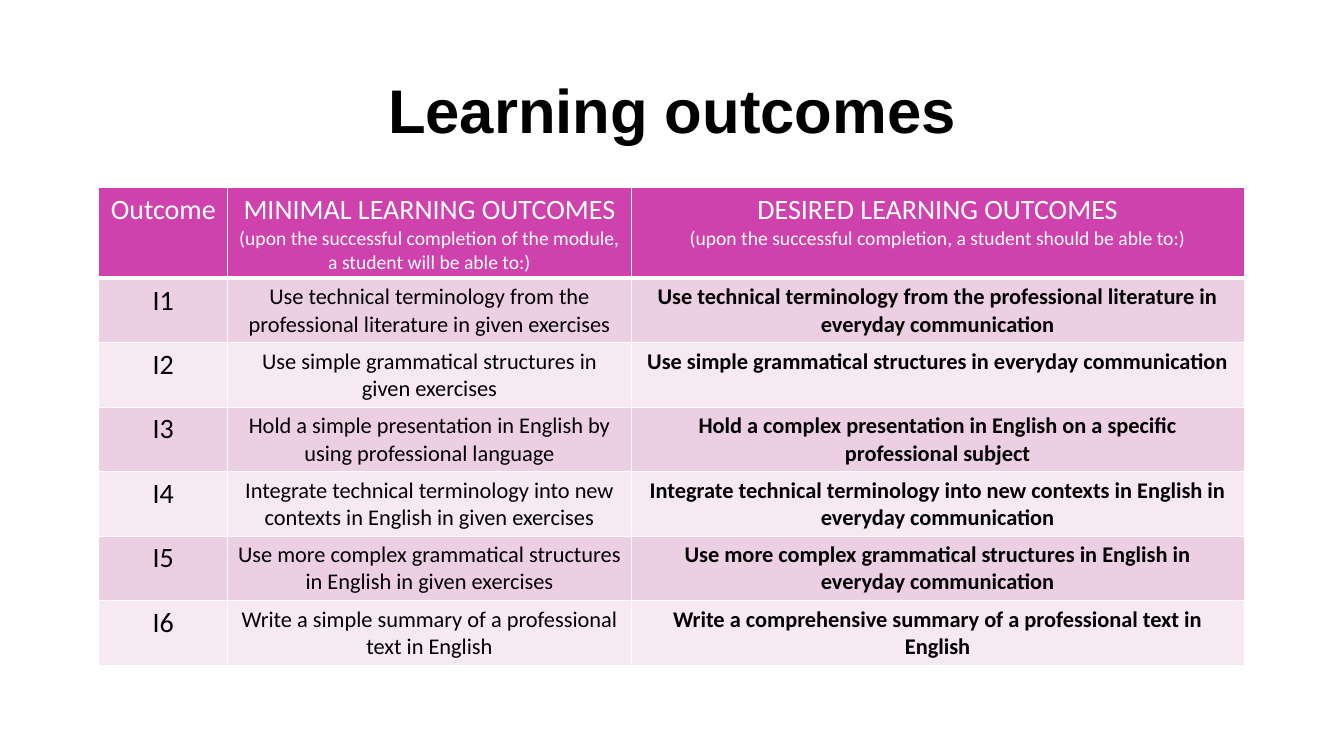
from lxml import etree
from pptx import Presentation, util as u
from pptx.dml.color import RGBColor
from pptx.enum import text
from pptx.oxml import ns

BLACK = RGBColor(0x00, 0x00, 0x00)
WHITE = RGBColor(0xFF, 0xFF, 0xFF)
MAGENTA = RGBColor(0xCF, 0x41, 0xAD)
PINK = RGBColor(0xED, 0xCF, 0xE3)
PALE_PINK = RGBColor(0xF6, 0xE9, 0xF1)

HEADINGS = [
    ("Outcome",),
    ("MINIMAL LEARNING OUTCOMES",
     "(upon the successful completion of the module, a student will be able to:)"),
    ("DESIRED LEARNING OUTCOMES",
     "(upon the successful completion, a student should be able to:)"),
]
OUTCOMES = [
    ("Use technical terminology from the professional literature in given exercises",
     "Use technical terminology from the professional literature in everyday communication"),
    ("Use simple grammatical structures in given exercises",
     "Use simple grammatical structures in everyday communication"),
    ("Hold a simple presentation in English by using professional language",
     "Hold a complex presentation in English on a specific professional subject"),
    ("Integrate technical terminology into new contexts in English in given exercises",
     "Integrate technical terminology into new contexts in English in everyday communication"),
    ("Use more complex grammatical structures in English in given exercises",
     "Use more complex grammatical structures in English in everyday communication"),
    ("Write a simple summary of a professional text in English",
     "Write a comprehensive summary of a professional text in English"),
]
COLUMNS = [1.28, 4, 6.08]
HEADER_HEIGHT, OUTCOME_HEIGHT = 0.9, 0.64


def write(paragraph, words, size, color, bold=False, name="Calibri"):
    paragraph.alignment = text.PP_ALIGN.CENTER
    run = paragraph.add_run()
    run.text = words
    run.font.color.rgb = color
    look = {"size": u.Pt(size), "bold": bold, "name": name}
    for key, value in look.items():
        setattr(run.font, key, value)


def paint(cell, color, bottom_width):
    cell.fill.solid()
    cell.fill.fore_color.rgb = color
    properties = cell._tc.get_or_add_tcPr()
    for place, side in enumerate("LRTB"):
        width = u.Pt(bottom_width if side == "B" else 1)
        border = etree.Element(ns.qn(f"a:ln{side}"), w=str(int(width)))
        fill = etree.SubElement(border, ns.qn("a:solidFill"))
        etree.SubElement(fill, ns.qn("a:srgbClr"), val=str(WHITE))
        properties.insert(place, border)


deck = Presentation()
deck.slide_width, deck.slide_height = u.Inches(13.33), u.Inches(7.5)
slide = deck.slides.add_slide(deck.slide_layouts[6])

# Title
title = slide.shapes.add_textbox(
    u.Inches(0.92), u.Inches(0.4), u.Inches(11.5), u.Inches(1.45)).text_frame
title.word_wrap = True
title.vertical_anchor = text.MSO_ANCHOR.MIDDLE
title.paragraphs[0].line_spacing = 0.9
write(title.paragraphs[0], "Learning outcomes", 44, BLACK, True, "Arial")

# Table grid
table_height = HEADER_HEIGHT + len(OUTCOMES) * OUTCOME_HEIGHT
table = slide.shapes.add_table(
    len(OUTCOMES) + 1, len(COLUMNS), u.Inches(0.98), u.Inches(1.86),
    u.Inches(sum(COLUMNS)), u.Inches(table_height)).table
for column, width in zip(table.columns, COLUMNS):
    column.width = u.Inches(width)
for number, row in enumerate(table.rows):
    row.height = u.Inches(OUTCOME_HEIGHT if number else HEADER_HEIGHT)

# Header row
for cell, lines in zip(table.rows[0].cells, HEADINGS):
    paint(cell, MAGENTA, 3)
    for order, line in enumerate(lines):
        frame = cell.text_frame
        paragraph = frame.add_paragraph() if order else frame.paragraphs[0]
        write(paragraph, line, 14 if order else 20, WHITE)

# Outcome rows in alternating bands
for number, (minimal, desired) in enumerate(OUTCOMES, 1):
    band = PINK if number % 2 else PALE_PINK
    entries = [(f"I{number}", 20, False), (minimal, 16, False), (desired, 16, True)]
    for cell, (words, size, bold) in zip(table.rows[number].cells, entries):
        paint(cell, band, 1)
        write(cell.text_frame.paragraphs[0], words, size, BLACK, bold)

deck.save("out.pptx")
